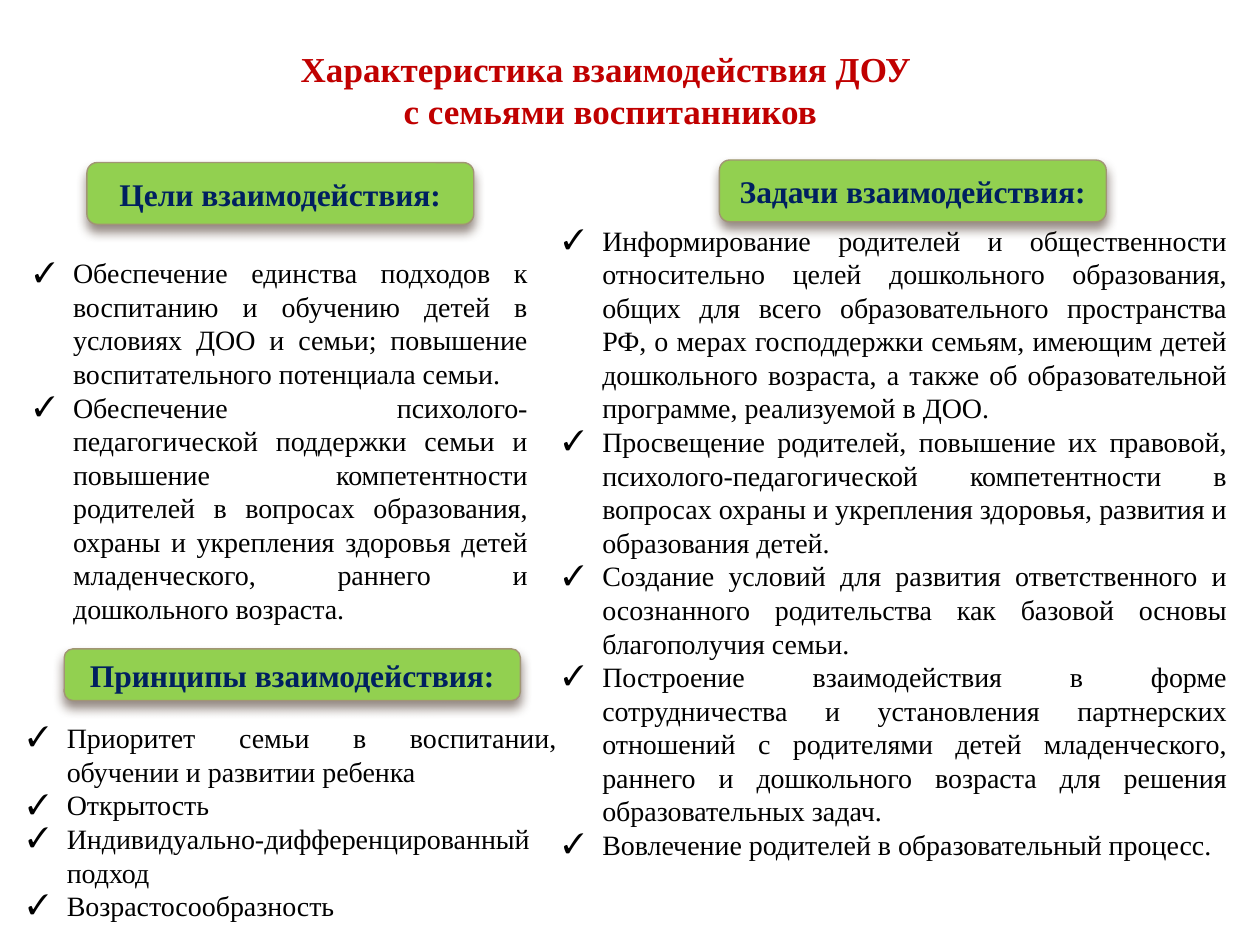
from lxml.etree import SubElement
from pptx import Presentation
from pptx.dml.color import RGBColor
from pptx.enum.shapes import MSO_SHAPE as SHAPE
from pptx.enum.text import MSO_ANCHOR as ANCHOR, MSO_AUTO_SIZE as FIT, PP_ALIGN as ALIGN
from pptx.oxml.ns import qn
from pptx.util import Inches, Pt

COLORS = {"title": "C00000", "plate": "92D050", "edge": "A19574",
          "head": "002060", "text": "000000", "shadow": "4E3B30"}
FONT = "Times New Roman"
COLS, ROWS = 100, 75  # slide grid
WIDTH, HEIGHT = Inches(10), Inches(7.5)

TITLE = ["Характеристика взаимодействия ДОУ ", "с семьями воспитанников"]

# Box: column, row, columns, rows. Plate: column offset, columns, rows.
# List: row offset. Slot: index of the body placeholder.
SECTIONS = [
    dict(slot=1, box=(1.7, 12.9, 41.2, 37.5), plate=(5.2, 30.7, 4.9), list_row=6.9,
         head="Цели взаимодействия:", items=[
             "Обеспечение единства подходов к воспитанию и обучению детей в условиях ДОО и семьи; "
             "повышение воспитательного потенциала семьи.",
             "Обеспечение психолого-педагогической поддержки семьи и повышение компетентности "
             "родителей в вопросах образования, охраны и укрепления здоровья детей младенческого, "
             "раннего и дошкольного возраста."]),
    dict(slot=4, box=(43.7, 12.7, 54.7, 56.7), plate=(13.4, 30.7, 4.9), list_row=4.5,
         head="Задачи взаимодействия:", items=[
             "Информирование родителей и общественности относительно целей дошкольного образования, "
             "общих для всего образовательного пространства РФ, о мерах господдержки семьям, имеющим "
             "детей дошкольного возраста, а также об образовательной программе, реализуемой в ДОО.",
             "Просвещение родителей, повышение их правовой, психолого-педагогической компетентности "
             "в вопросах охраны и укрепления здоровья, развития и образования детей.",
             "Создание условий для развития ответственного и осознанного родительства как базовой "
             "основы благополучия семьи.",
             "Построение взаимодействия в форме сотрудничества и установления партнерских отношений "
             "с родителями детей младенческого, раннего и дошкольного возраста для решения "
             "образовательных задач.",
             "Вовлечение родителей в образовательный процесс."]),
    dict(slot=2, box=(1.2, 51.5, 44, 22.4), plate=(3.9, 36.2, 4.1), list_row=5.2,
         head="Принципы взаимодействия:", items=[
             "Приоритет семьи в воспитании, обучении и развитии ребенка",
             "Открытость",
             "Индивидуально-дифференцированный подход",
             "Возрастосообразность"]),
]


def rgb(name):
    return RGBColor.from_string(COLORS[name])


def cells(col, row, cols, rows):
    """Turn grid units into slide lengths."""
    w, h = WIDTH / COLS, HEIGHT / ROWS
    return [int(v) for v in (col * w, row * h, cols * w, rows * h)]


def place(sp, box):
    for name, value in zip(("left", "top", "width", "height"), cells(*box)):
        setattr(sp, name, value)


def write(sp, lines, size, color, bold=False, align=ALIGN.CENTER, anchor=ANCHOR.TOP):
    tf = sp.text_frame
    for name, value in dict(word_wrap=True, auto_size=FIT.NONE, vertical_anchor=anchor).items():
        setattr(tf, name, value)
    for i, line in enumerate(lines):
        p = tf.paragraphs[0] if i == 0 else tf.add_paragraph()
        for name, value in dict(alignment=align, line_spacing=1.0,
                                space_before=Pt(0), space_after=Pt(0)).items():
            setattr(p, name, value)
        r = p.add_run()
        r.text = line
        for name, value in dict(name=FONT, size=Pt(size), bold=bold).items():
            setattr(r.font, name, value)
        r.font.color.rgb = rgb(color)


def add_checks(tf):
    for p in tf.paragraphs:
        pPr = p._p.get_or_add_pPr()
        pPr.set("marL", str(Inches(0.31)))
        pPr.set("indent", str(-Inches(0.31)))
        SubElement(pPr, qn("a:buFont"), typeface=FONT)
        SubElement(pPr, qn("a:buChar"), char="✓")


def add_shadow(sp):
    sp.shadow.inherit = False
    effects = sp._element.spPr.find(qn("a:effectLst"))
    outer = SubElement(effects, qn("a:outerShdw"), blurRad=str(Pt(6)), dist=str(Pt(4)),
                       dir="5400000", rotWithShape="0")
    color = SubElement(outer, qn("a:srgbClr"), val=COLORS["shadow"])
    SubElement(color, qn("a:alpha"), val="60000")


def add_plate(slide, box, text):
    sp = slide.shapes.add_shape(SHAPE.ROUNDED_RECTANGLE, *cells(*box))
    sp.fill.solid()
    sp.fill.fore_color.rgb = rgb("plate")
    sp.line.color.rgb = rgb("edge")
    sp.line.width = Pt(0.79)
    add_shadow(sp)
    write(sp, [text], 18, "head", bold=True, anchor=ANCHOR.MIDDLE)


def add_title(slide, box):
    place(slide.shapes.title, box)
    write(slide.shapes.title, TITLE, 20, "title", bold=True)


def add_section(slide, body, box, plate, list_row, head, items):
    col, row, cols, rows = box
    # Heading plate
    inset, plate_cols, plate_rows = plate
    add_plate(slide, (col + inset, row, plate_cols, plate_rows), head)
    # Checked list
    place(body, (col, row + list_row, cols, rows - list_row))
    write(body, items, 16, "text", align=ALIGN.JUSTIFY)
    add_checks(body.text_frame)


def main():
    prs = Presentation()
    prs.slide_width, prs.slide_height = WIDTH, HEIGHT
    slide = prs.slides.add_slide(prs.slide_layouts.get_by_name("Comparison"))
    add_title(slide, (9.1, 3.3, 78.7, 7.7))
    bodies = {sp.placeholder_format.idx: sp for sp in slide.placeholders}
    for section in SECTIONS:
        parts = dict(section)
        add_section(slide, bodies[parts.pop("slot")], **parts)
    # The layout has one body more than needed
    spare = bodies[3]._element
    spare.getparent().remove(spare)
    prs.save("out.pptx")


if __name__ == "__main__":
    main()
